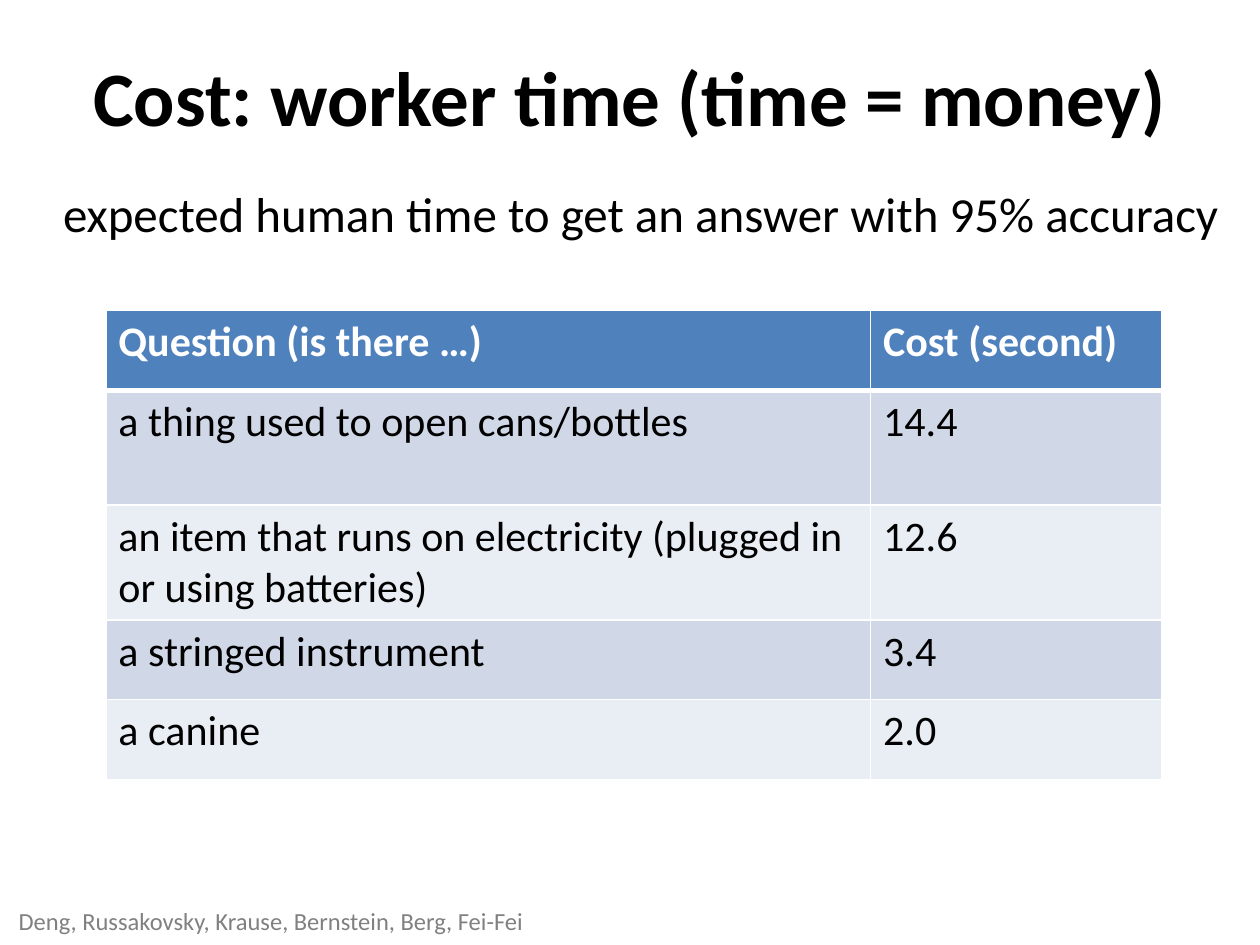
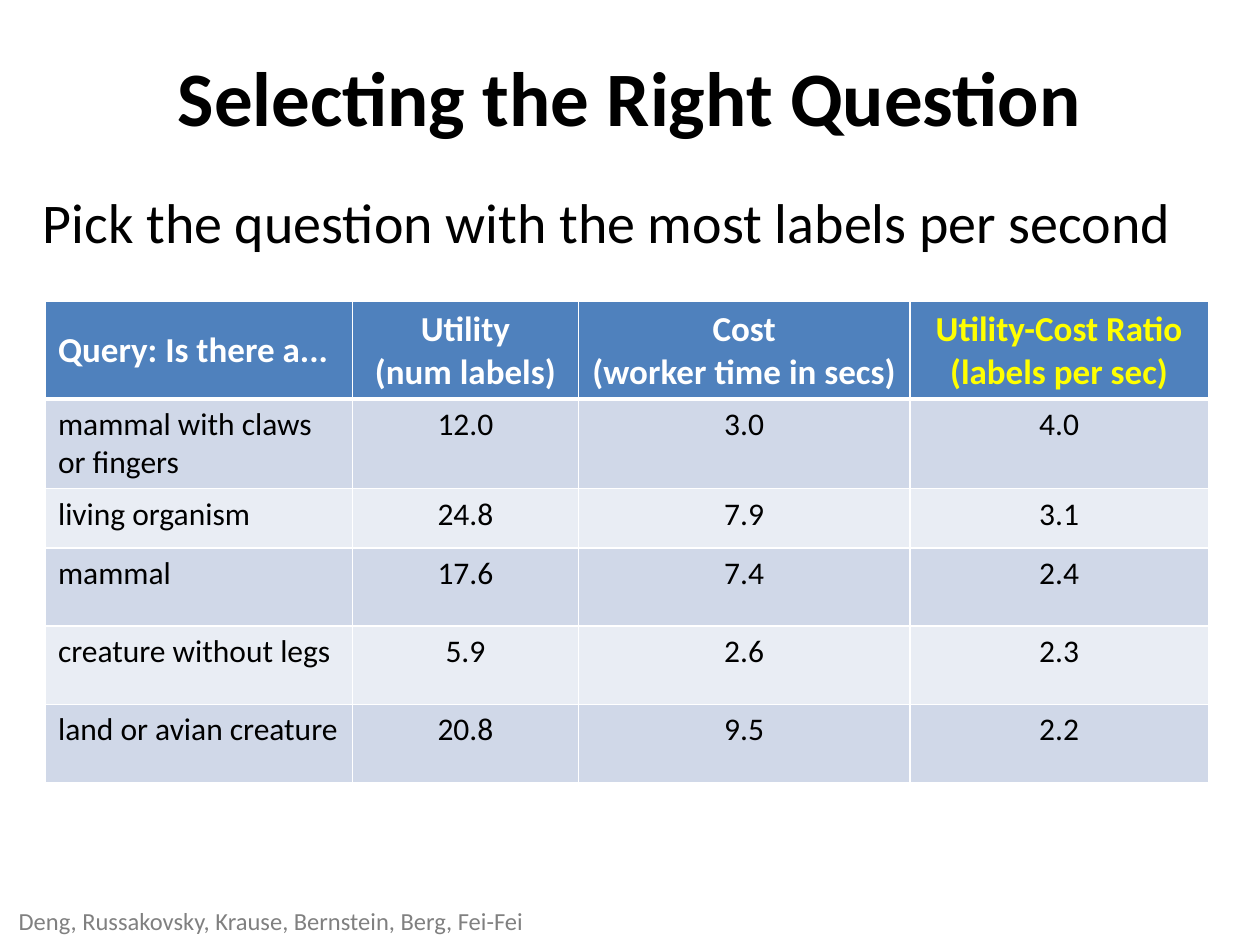
from pptx import Presentation
from pptx.dml.color import RGBColor
from pptx.enum.text import MSO_ANCHOR, MSO_AUTO_SIZE, PP_ALIGN
from pptx.oxml import parse_xml
from pptx.oxml.ns import nsdecls
from pptx.util import Pt

LEFT, CENTER = PP_ALIGN.LEFT, PP_ALIGN.CENTER
TOP, MIDDLE = MSO_ANCHOR.TOP, MSO_ANCHOR.MIDDLE
NO_FIT = MSO_AUTO_SIZE.NONE

BLACK = RGBColor(0x00, 0x00, 0x00)
WHITE = RGBColor(0xFF, 0xFF, 0xFF)
GREY = RGBColor(0x80, 0x80, 0x80)
YELLOW = RGBColor(0xFF, 0xFF, 0x00)
HEADER_BLUE = RGBColor(0x4F, 0x81, 0xBD)
BANDS = RGBColor(0xD0, 0xD8, 0xE8), RGBColor(0xE9, 0xED, 0xF4)

FONT = "Calibri"
TITLE_AND_CONTENT = 1
TITLE_BOX = (36, 9.5, 648, 90)
FOOTER_BOX = (3.6, 514, 313, 24.5)
FOOTER = "Deng, Russakovsky, Krause, Bernstein, Berg, Fei-Fei"

PAGES = [
    {
        "title": "Cost: worker time (time = money)",
        "lead": "expected human time to get an answer with 95% accuracy",
        "lead_box": (28.8, 101, 680, 111),
        "lead_size": 28,
        "table": {
            "corner": (60.5, 177.5),
            "columns": (437, 166.3),
            "heights": (45.5, 65.6, 65.6, 45.6, 45.6),
            "sizes": (24, 24),
            "header_anchor": TOP,
            "value_align": LEFT,
            "highlight": None,
            "rows": [
                ("Question (is there …)", "Cost (second)"),
                ("a thing used to open cans/bottles", "14.4"),
                ("an item that runs on electricity (plugged in or using batteries)", "12.6"),
                ("a stringed instrument", "3.4"),
                ("a canine", "2.0"),
            ],
        },
    },
    {
        "title": "Selecting the Right Question",
        "lead": "Pick the question with the most labels per second",
        "lead_box": (17.3, 103.7, 702.7, 55.4),
        "lead_size": 32,
        "table": {
            "corner": (26, 172.3),
            "columns": (175.5, 129, 189.5, 170.5),
            "heights": (55.8, 51.2, 34, 44.6, 44.6, 44.6),
            "sizes": (20, 18),
            "header_anchor": MIDDLE,
            "value_align": CENTER,
            "highlight": 3,
            "rows": [
                ("Query: Is there a...", "Utility\n(num labels)",
                 "Cost\n(worker time in secs)", "Utility-Cost Ratio\n(labels per sec)"),
                ("mammal with claws or fingers", "12.0", "3.0", "4.0"),
                ("living organism", "24.8", "7.9", "3.1"),
                ("mammal", "17.6", "7.4", "2.4"),
                ("creature without legs", "5.9", "2.6", "2.3"),
                ("land or avian creature", "20.8", "9.5", "2.2"),
            ],
        },
    },
]


def points(values):
    return [Pt(value) for value in values]


def write(frame, text, size, color, bold=False, align=LEFT):
    """Fill a text frame, one paragraph per line of text."""
    frame.text = text
    for para in frame.paragraphs:
        para.alignment = align
        look = {"name": FONT, "size": Pt(size), "bold": bold}
        for span in para.runs:
            for name, value in look.items():
                setattr(span.font, name, value)
            span.font.color.rgb = color


def place(shape, box):
    for name, value in zip(("left", "top", "width", "height"), points(box)):
        setattr(shape, name, value)


def add_title(page, text):
    title = page.shapes.title
    place(title, TITLE_BOX)
    title.text_frame.auto_size = NO_FIT
    title.text_frame.vertical_anchor = MIDDLE
    write(title.text_frame, text, 44, BLACK, True, CENTER)


def add_lead(page, text, box, size):
    """Put one unbulleted line into the body placeholder."""
    body = page.placeholders[1]
    place(body, box)
    body.text_frame.auto_size = NO_FIT
    write(body.text_frame, text, size, BLACK)
    props = body.text_frame.paragraphs[0]._p.get_or_add_pPr()
    props.set("marL", "0")
    props.set("indent", "0")
    props.append(parse_xml(f"<a:buNone {nsdecls('a')}/>"))


def add_footer(page):
    box = page.shapes.add_textbox(*points(FOOTER_BOX))
    box.text_frame.word_wrap = True
    write(box.text_frame, FOOTER, 14, GREY)


def set_borders(cell, top, bottom):
    """Draw white borders; top and bottom are widths in points."""
    props = cell._tc.get_or_add_tcPr()
    widths = {"lnL": 1, "lnR": 1, "lnT": top, "lnB": bottom}
    for index, (side, width) in enumerate(widths.items()):
        props.insert(index, parse_xml(
            f'<a:{side} {nsdecls("a")} w="{Pt(width)}"><a:solidFill>'
            f'<a:srgbClr val="{WHITE}"/></a:solidFill></a:{side}>'))


def add_table(page, data):
    rows, columns, heights = data["rows"], data["columns"], data["heights"]
    box = (*data["corner"], sum(columns), sum(heights))
    table = page.shapes.add_table(len(rows), len(columns), *points(box)).table
    for column, width in zip(table.columns, columns):
        column.width = Pt(width)
    for row, height in zip(table.rows, heights):
        row.height = Pt(height)

    header_size, value_size = data["sizes"]
    for r, texts in enumerate(rows):
        header = r == 0
        for c, text in enumerate(texts):
            cell = table.cell(r, c)
            cell.fill.solid()
            cell.fill.fore_color.rgb = HEADER_BLUE if header else BANDS[(r - 1) % 2]
            cell.vertical_anchor = data["header_anchor"] if header else TOP
            set_borders(cell, 3 if r == 1 else 1, 3 if header else 1)
            align = data["value_align"] if c else LEFT
            if header:
                color = YELLOW if c == data["highlight"] else WHITE
                write(cell.text_frame, text, header_size, color, True, align)
            else:
                write(cell.text_frame, text, value_size, BLACK, False, align)


def main():
    deck = Presentation()
    deck.slide_width, deck.slide_height = Pt(720), Pt(540)
    for content in PAGES:
        page = deck.slides.add_slide(deck.slide_layouts[TITLE_AND_CONTENT])
        add_footer(page)
        add_title(page, content["title"])
        add_lead(page, content["lead"], content["lead_box"], content["lead_size"])
        add_table(page, content["table"])
    deck.save("out.pptx")


if __name__ == "__main__":
    main()
